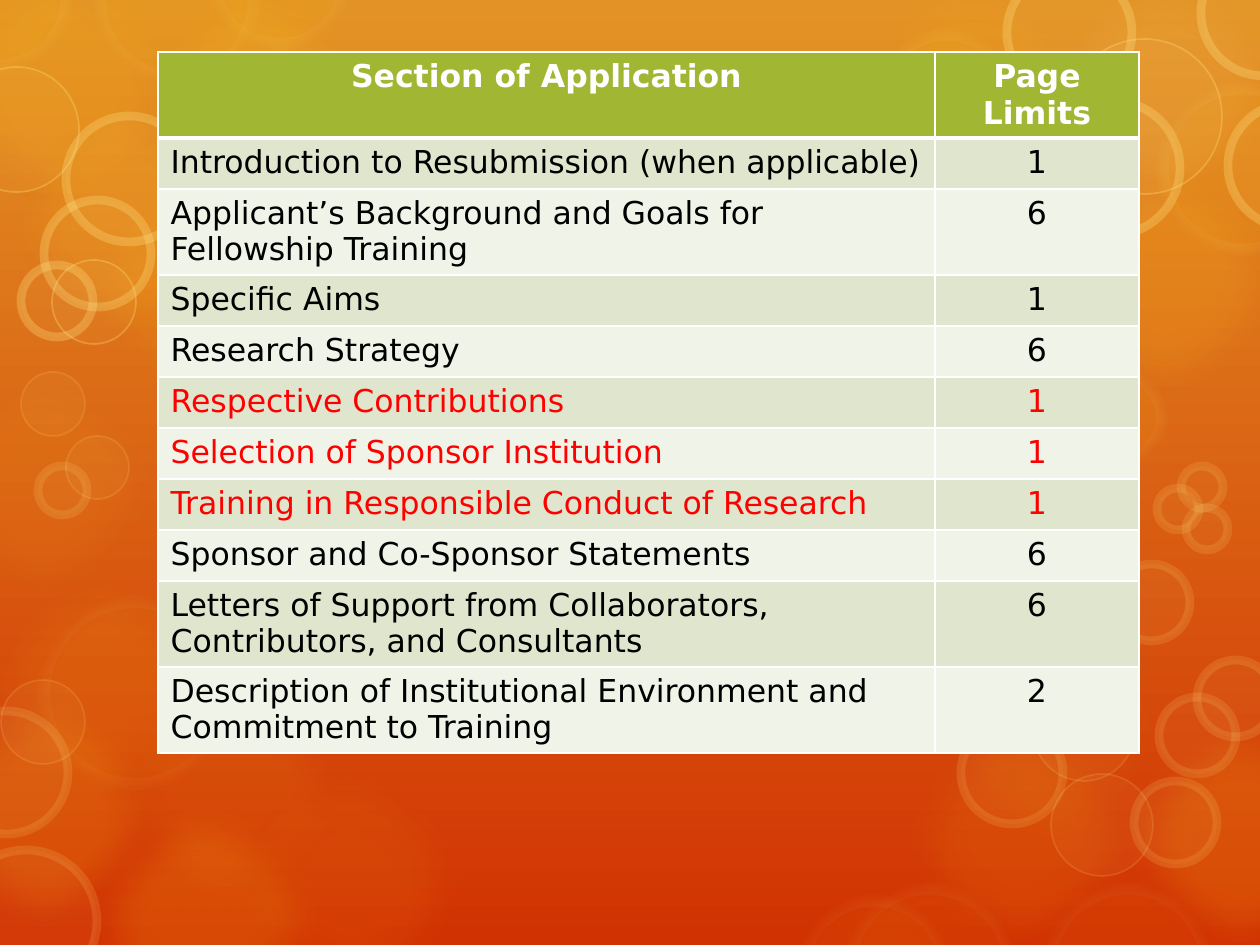
from dataclasses import dataclass

from lxml.etree import SubElement
from pptx import Presentation
from pptx.dml.color import RGBColor
from pptx.enum.shapes import MSO_SHAPE as Shape
from pptx.enum.text import PP_ALIGN as Align
from pptx.oxml.ns import qn
from pptx.util import Pt

PX = 914400 // 126
WIDTH, HEIGHT = 1260, 945
GLOW_SIZE = 263


@dataclass(frozen=True)
class Theme:
    """Colours, font and type size of the slide."""
    sky: str = "E39325"
    ember: str = "D13202"
    gold: str = "FDC61B"
    pale: str = "FFE281"
    cream: str = "FEEBAE"
    header: str = "A1B633"
    bands: tuple = ("E0E5CE", "F0F3E8")
    white: str = "FFFFFF"
    black: str = "000000"
    red: str = "FF0000"
    font: str = "DejaVu Sans"
    size: int = 18


@dataclass(frozen=True)
class Bubble:
    """Look of a translucent circle; opacities in percent, sizes in points."""
    fill: str
    opacity: int
    line: str = ""
    line_width: int = 0
    line_opacity: int = 0
    soft: int = 0


THEME = Theme()


def glow(opacity, color=THEME.gold):
    """Return the look of a large blurred spot."""
    return Bubble(color, opacity, soft=20)


def ring(width, opacity):
    """Return the look of a thin outlined bubble."""
    return Bubble(THEME.pale, 5, THEME.pale, width, opacity)


HAZE = Bubble(THEME.gold, 10, THEME.cream, 14, 6, 8)
FAINT_HAZE = Bubble(THEME.gold, 6, THEME.cream, 14, 4, 8)

GLOWS = [
    (-32, 557, glow(8)), (72, 151, glow(10)), (258, 39, glow(10)),
    (72, 790, glow(16)), (-70, -41, glow(14)), (127, -23, glow(20)),
    (0, 91, glow(15)), (1033, -41, glow(10, THEME.pale)), (843, -37, glow(10)),
    (1033, 151, glow(15)), (1110, 708, glow(16)), (919, 601, glow(5)),
    (-86, 682, glow(16)), (97, 660, glow(8)), (890, 708, glow(10)),
    (218, 751, glow(8)), (-88, 355, glow(8)),
]
BUBBLES = [
    (HAZE, [(1157, 82, 173), (874, 29, 144), (1067, 367, 100),
            (94, -82, 165), (207, -94, 144), (-72, -73, 144)]),
    (FAINT_HAZE, [(38, 596, 193), (796, 895, 156), (844, 883, 171), (1043, 883, 169)]),
    (ring(5, 15), [(-45, 850, 142), (-55, 711, 123), (961, 722, 102), (1134, 781, 83),
                   (1113, 564, 77), (1159, 697, 77), (1197, 660, 77), (1181, 466, 42),
                   (1157, 488, 42), (1186, 508, 42), (38, 466, 49)]),
    (ring(5, 30), [(66, 116, 126), (44, 200, 107), (21, 265, 72), (1007, -30, 125),
                   (1201, -50, 126), (1228, 103, 125), (1046, 101, 134)]),
    (ring(1, 15), [(1, 680, 84), (1051, 774, 102), (1033, 679, 102),
                   (21, 372, 64), (66, 436, 63)]),
    (ring(1, 30), [(-46, 67, 125), (52, 260, 84), (1067, 39, 155)]),
]
HEADINGS = ("Section of Application", "Page Limits")
SECTIONS = [
    ("Introduction to Resubmission (when applicable)", 1, 51),
    ("Applicant’s Background and Goals for Fellowship Training", 6, 86),
    ("Specific Aims", 1, 51),
    ("Research Strategy", 6, 51),
    ("Respective Contributions", 1, 51),
    ("Selection of Sponsor Institution", 1, 51),
    ("Training in Responsible Conduct of Research", 1, 51),
    ("Sponsor and Co-Sponsor Statements", 6, 51),
    ("Letters of Support from Collaborators, Contributors, and Consultants", 6, 86),
    ("Description of Institutional Environment and Commitment to Training", 2, 86),
]
HIGHLIGHTED = range(5, 8)


def rgb(color):
    """Turn a hex string into a colour."""
    return RGBColor.from_string(color)


def write(frame, text, color=THEME.black, bold=False, align=Align.LEFT):
    """Put formatted text into a text frame."""
    paragraph = frame.paragraphs[0]
    paragraph.alignment = align
    run = paragraph.add_run()
    run.text = text
    run.font.name, run.font.size, run.font.bold = THEME.font, Pt(THEME.size), bold
    run.font.color.rgb = rgb(color)


def add_borders(cell, top, bottom):
    """Draw white borders around a cell."""
    properties = cell._tc.get_or_add_tcPr()
    for side, width in (("L", 1), ("R", 1), ("T", top), ("B", bottom)):
        line = SubElement(properties, qn(f"a:ln{side}"), w=str(Pt(width)))
        fill = SubElement(line, qn("a:solidFill"))
        SubElement(fill, qn("a:srgbClr"), val=THEME.white)


class SlideBuilder:
    """Holds the theme and the current slide."""

    def __init__(self, slide, theme):
        self.slide, self.theme = slide, theme

    def background(self):
        """Fill the background from top to bottom."""
        fill = self.slide.background.fill
        fill.gradient()
        fill.gradient_angle = 270
        colors = (self.theme.sky, self.theme.ember)
        for position, (stop, color) in enumerate(zip(fill.gradient_stops, colors)):
            stop.color.rgb = rgb(color)
            stop.position = position

    def bubble(self, x, y, size, look):
        """Draw a translucent bubble."""
        shape = self.slide.shapes.add_shape(
            Shape.OVAL, x * PX, y * PX, size * PX, size * PX)
        shape.fill.solid()
        shape.fill.fore_color.rgb = rgb(look.fill)
        if look.line:
            shape.line.color.rgb = rgb(look.line)
            shape.line.width = Pt(look.line_width)
        else:
            shape.line.fill.background()
        shape.shadow.inherit = False
        properties = shape.element.spPr
        colors = list(properties.iter(qn("a:srgbClr")))
        for color, opacity in zip(colors, (look.opacity, look.line_opacity)):
            SubElement(color, qn("a:alpha"), val=str(opacity * 1000))
        if look.soft:
            effects = properties.find(qn("a:effectLst"))
            SubElement(effects, qn("a:softEdge"), rad=str(Pt(look.soft)))

    def table(self, x, y, widths, heights, rows, highlighted):
        """Draw a banded table with a header row."""
        theme = self.theme
        table = self.slide.shapes.add_table(
            len(rows), len(widths), x * PX, y * PX,
            sum(widths) * PX, sum(heights) * PX).table
        for column, width in zip(table.columns, widths):
            column.width = width * PX
        for index, (row, height, texts) in enumerate(zip(table.rows, heights, rows)):
            row.height = height * PX
            header = index == 0
            fill = theme.header if header else theme.bands[(index - 1) % 2]
            color = theme.white if header else theme.red if index in highlighted else theme.black
            for position, (cell, text) in enumerate(zip(row.cells, texts)):
                add_borders(cell, 3 if index == 1 else 1, 3 if header else 1)
                cell.fill.solid()
                cell.fill.fore_color.rgb = rgb(fill)
                align = Align.CENTER if header or position else Align.LEFT
                write(cell.text_frame, text, color=color, bold=header, align=align)


def main():
    """Build and save the slide."""
    presentation = Presentation()
    presentation.slide_width, presentation.slide_height = WIDTH * PX, HEIGHT * PX
    slide = presentation.slides.add_slide(presentation.slide_layouts[6])
    builder = SlideBuilder(slide, THEME)
    builder.background()
    for x, y, look in GLOWS:
        builder.bubble(x, y, GLOW_SIZE, look)
    for look, places in BUBBLES:
        for x, y, size in places:
            builder.bubble(x, y, size, look)
    rows = [HEADINGS] + [(name, str(limit)) for name, limit, _ in SECTIONS]
    heights = [86] + [height for _, _, height in SECTIONS]
    builder.table(158, 52, (777, 204), heights, rows, HIGHLIGHTED)
    presentation.save("out.pptx")


if __name__ == "__main__":
    main()
